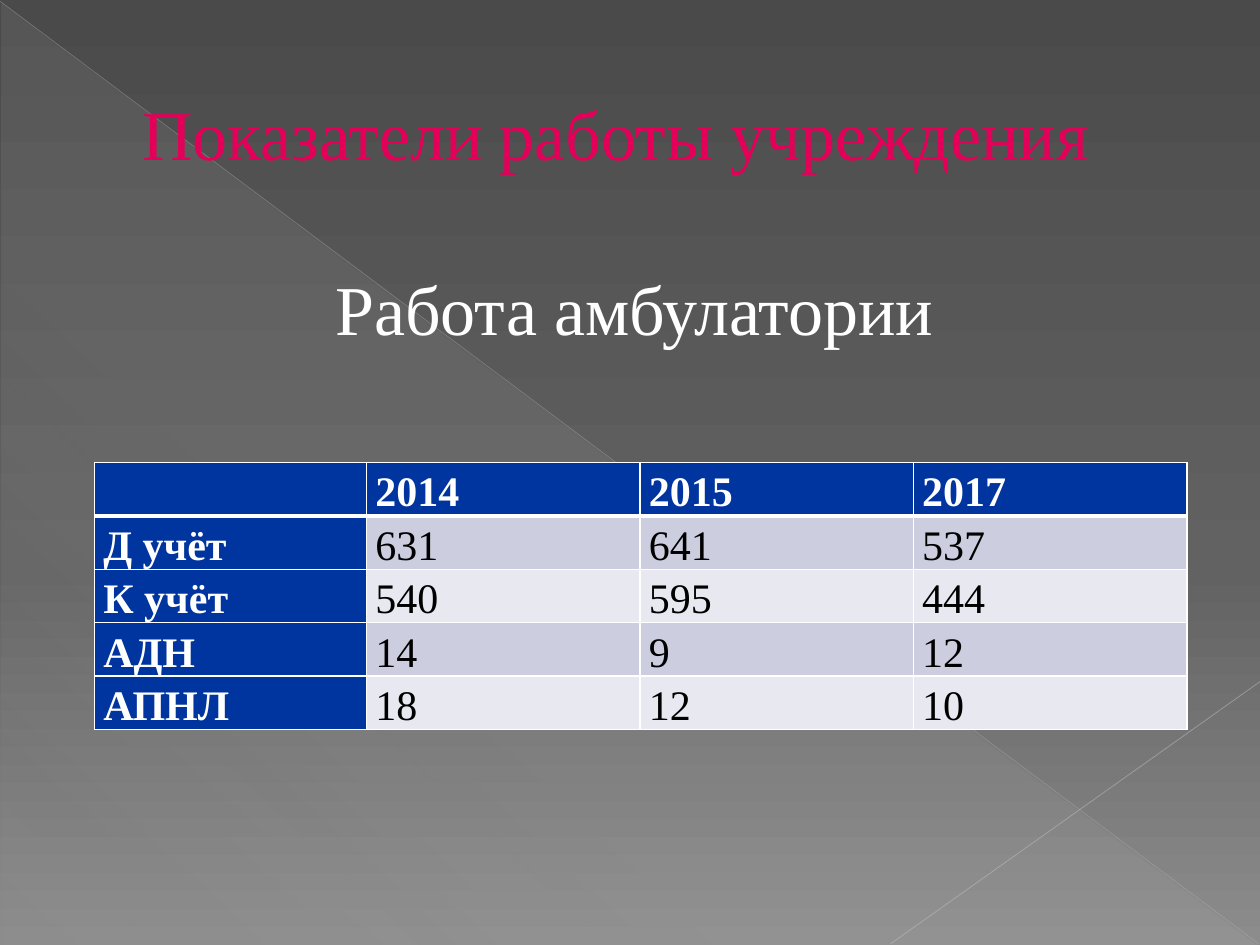
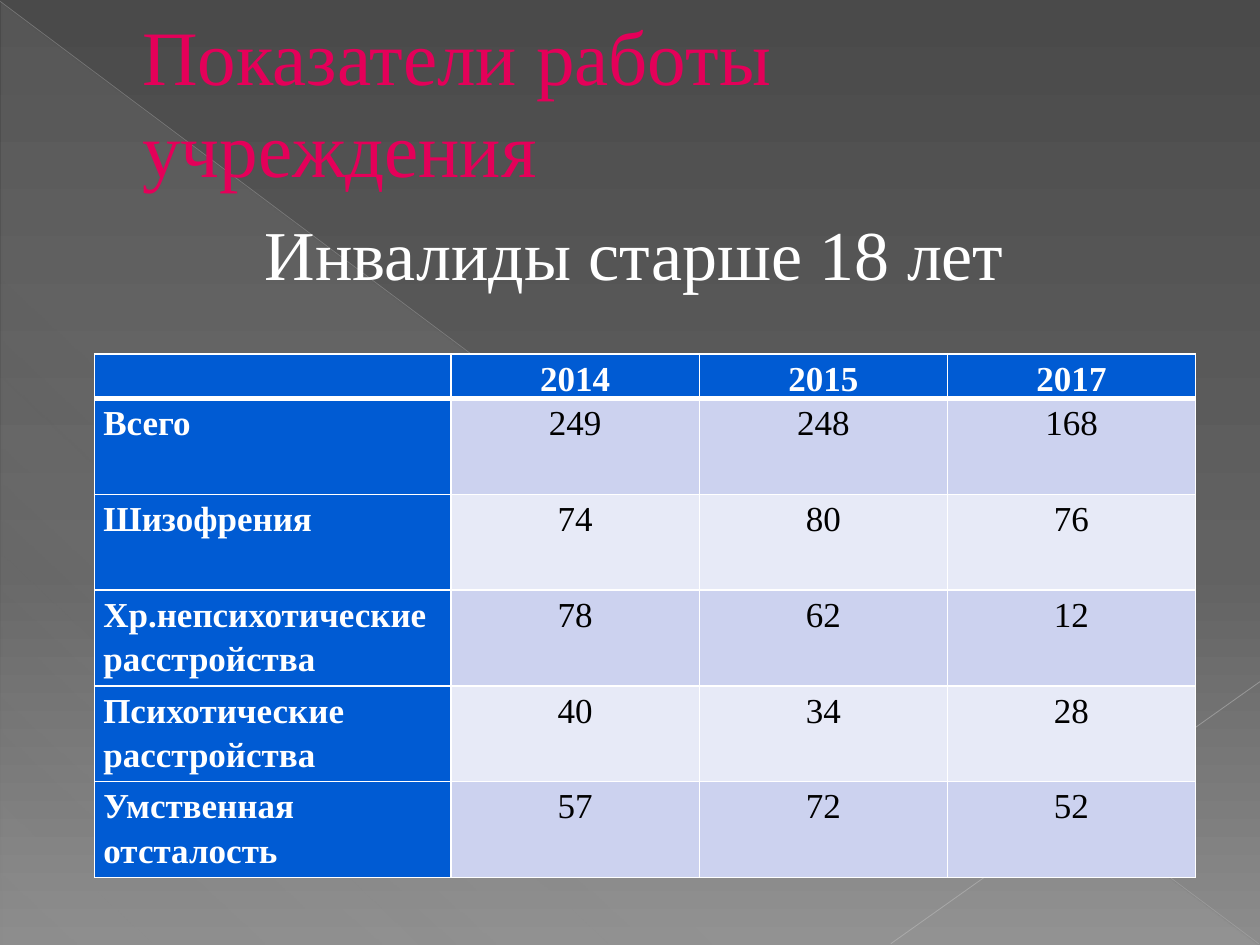
from lxml.etree import SubElement
from pptx import Presentation
from pptx.dml.color import RGBColor
from pptx.enum.shapes import MSO_CONNECTOR, MSO_SHAPE
from pptx.enum.text import MSO_ANCHOR, MSO_AUTO_SIZE, PP_ALIGN
from pptx.oxml import parse_xml
from pptx.oxml.ns import nsdecls, qn
from pptx.util import Inches, Pt

FONT = "Times New Roman"
COLORS = {
    "title": "E40059",
    "white": "FFFFFF",
    "black": "000000",
    "triangle": "D2D2D2",
    "diagonal": "BFBFBF",
    "corner": "C6C6C6",
}
BACKGROUND_STOPS = [(0, "4A4A4A", 100), (60, "626262", 100), (100, "8C8C8C", 100)]
TRIANGLE_STOPS = [(0, COLORS["triangle"], 10), (70, COLORS["triangle"], 8),
                  (100, COLORS["triangle"], 1)]
NAVY = {"header": "00349E", "bands": ("CCCEDF", "E7E8F0")}
BLUE = {"header": "005BD3", "bands": ("CCD2EF", "E7EAF7")}
TITLE = "Показатели работы учреждения"
YEARS = ["", "2014", "2015", "2017"]
AMBULATORY_ROWS = [
    YEARS,
    ["Д учёт", "631", "641", "537"],
    ["К учёт", "540", "595", "444"],
    ["АДН", "14", "9", "12"],
    ["АПНЛ", "18", "12", "10"],
]
DISABILITY_ROWS = [
    YEARS,
    ["Всего", "249", "248", "168"],
    ["Шизофрения", "74", "80", "76"],
    ["Хр.непсихотическиерасстройства", "78", "62", "12"],
    ["Психотические расстройства", "40", "34", "28"],
    ["Умственная отсталость", "57", "72", "52"],
]


def rgb(name):
    return RGBColor.from_string(COLORS.get(name, name))


def set_gradient(fill, owner, stops, angle):
    """Fill with (position %, colour, opacity %) stops at a clockwise angle."""
    fill.gradient()
    gradient = owner.xpath(".//a:gradFill")[0]
    for child in list(gradient):
        gradient.remove(child)
    stop_list = SubElement(gradient, qn("a:gsLst"))
    for position, color, opacity in stops:
        stop = SubElement(stop_list, qn("a:gs"), pos=str(position * 1000))
        color_element = SubElement(stop, qn("a:srgbClr"), val=color)
        SubElement(color_element, qn("a:alpha"), val=str(opacity * 1000))
    SubElement(gradient, qn("a:lin"), ang=str(angle * 60000), scaled="0")


def add_thin_line(slide, start, end, color, width, opacity):
    points = [Inches(value) for value in (*start, *end)]
    line = slide.shapes.add_connector(MSO_CONNECTOR.STRAIGHT, *points)
    line.line.color.rgb = rgb(color)
    line.line.width = Pt(width)
    color_element = line._element.xpath(".//a:ln//a:srgbClr")[0]
    SubElement(color_element, qn("a:alpha"), val=str(opacity * 1000))
    SubElement(line._element.spPr, qn("a:effectLst"))
    return line


def decorate_master(master, slide):
    """Give the master its background, triangle and thin lines."""
    set_gradient(master.background.fill, master._element, BACKGROUND_STOPS, 90)
    triangle = slide.shapes.add_shape(
        MSO_SHAPE.RIGHT_TRIANGLE, Inches(0.01), Inches(0.02), Inches(9.98), Inches(7.48))
    triangle.shadow.inherit = False
    triangle.line.fill.background()
    set_gradient(triangle.fill, triangle._element, TRIANGLE_STOPS, 133)
    diagonal = add_thin_line(slide, (0, 0.01), (9.99, 7.49), "diagonal", 0.39, 35)
    corner = add_thin_line(slide, (10, 5.41), (7.07, 7.49), "corner", 0.47, 45)
    # Move the drawn shapes behind the master's placeholders
    for index, shape in enumerate((triangle, diagonal, corner)):
        shape._element.xpath(".//p:cNvPr")[0].set("id", str(100 + index))
        master.shapes._spTree.insert(2 + index, shape._element)


def fill_placeholder(placeholder, text, top, height, size, color, align, indent):
    placeholder.left, placeholder.top = Inches(0.5), Inches(top)
    placeholder.width, placeholder.height = Inches(9), Inches(height)
    frame = placeholder.text_frame
    frame.text = text
    frame.auto_size = MSO_AUTO_SIZE.NONE
    paragraph = frame.paragraphs[0]
    paragraph.alignment = align
    paragraph.font.name = FONT
    paragraph.font.size = Pt(size)
    paragraph.font.color.rgb = rgb(color)
    properties = paragraph._p.get_or_add_pPr()
    properties.set("marL", str(Inches(indent)))
    properties.set("indent", "0")
    return frame


def add_title(slide, height, size):
    frame = fill_placeholder(slide.shapes.title, TITLE, 0.29, height, size,
                             "title", PP_ALIGN.LEFT, 0.53)
    frame.vertical_anchor = MSO_ANCHOR.MIDDLE


def add_subtitle(slide, text, top, height):
    frame = fill_placeholder(slide.placeholders[1], text, top, height, 40,
                             "white", PP_ALIGN.CENTER, 0.07)
    paragraph = frame.paragraphs[0]
    paragraph.space_before = Pt(8)
    properties = paragraph._p.get_or_add_pPr()
    bullet = parse_xml(f"<a:buNone {nsdecls('a')}/>")
    properties.insert_element_before(bullet, "a:tabLst", "a:defRPr", "a:extLst")


def set_borders(cell, bottom_width):
    properties = cell._tc.get_or_add_tcPr()
    widths = {"lnL": 1, "lnR": 1, "lnT": 1, "lnB": bottom_width}
    for index, (side, width) in enumerate(widths.items()):
        properties.insert(index, parse_xml(
            f'<a:{side} {nsdecls("a")} w="{Pt(width)}"><a:solidFill>'
            f'<a:srgbClr val="{COLORS["white"]}"/></a:solidFill></a:{side}>'))


def format_cell(cell, text, fill, size, heading, align, bottom_width):
    cell.fill.solid()
    cell.fill.fore_color.rgb = rgb(fill)
    cell.margin_left = cell.margin_right = Inches(0.07)
    cell.margin_top = cell.margin_bottom = 0
    set_borders(cell, bottom_width)
    cell.text = text
    paragraph = cell.text_frame.paragraphs[0]
    paragraph.alignment = align
    paragraph.line_spacing = 1.15
    paragraph.font.name = FONT
    paragraph.font.size = Pt(size)
    paragraph.font.bold = heading
    paragraph.font.color.rgb = rgb("white" if heading else "black")


def add_data_table(slide, rows, top, column_widths, row_heights, palette, size, value_align):
    table = slide.shapes.add_table(
        len(rows), len(column_widths), Inches(0.75), Inches(top),
        Inches(sum(column_widths)), Inches(sum(row_heights))).table
    for column, width in zip(table.columns, column_widths):
        column.width = Inches(width)
    for row, height in zip(table.rows, row_heights):
        row.height = Inches(height)
    for row_index, values in enumerate(rows):
        for column_index, text in enumerate(values):
            heading = row_index == 0 or column_index == 0
            fill = palette["header"] if heading else palette["bands"][(row_index - 1) % 2]
            align = value_align if column_index else PP_ALIGN.LEFT
            format_cell(table.cell(row_index, column_index), text, fill, size,
                        heading, align, 1 if row_index else 3)


def main():
    presentation = Presentation()
    presentation.slide_width = Inches(10)
    presentation.slide_height = Inches(7.5)
    layout = presentation.slide_layouts[1]

    # Ambulatory work
    slide = presentation.slides.add_slide(layout)
    decorate_master(presentation.slide_master, slide)
    add_title(slide, 1.53, 40)
    add_subtitle(slide, "Работа амбулатории", 2.06, 5)
    add_data_table(slide, AMBULATORY_ROWS, 3.67, [2.16] + [2.17] * 3, [0.42] * 5,
                   NAVY, 24, PP_ALIGN.LEFT)

    # Adults with disabilities
    slide = presentation.slides.add_slide(layout)
    add_title(slide, 1.02, 44)
    add_subtitle(slide, "Инвалиды старше 18 лет", 1.62, 5.44)
    add_data_table(slide, DISABILITY_ROWS, 2.81, [2.83] + [1.97] * 3, [0.35] + [0.76] * 5,
                   BLUE, 20, PP_ALIGN.CENTER)

    presentation.save("out.pptx")


if __name__ == "__main__":
    main()
